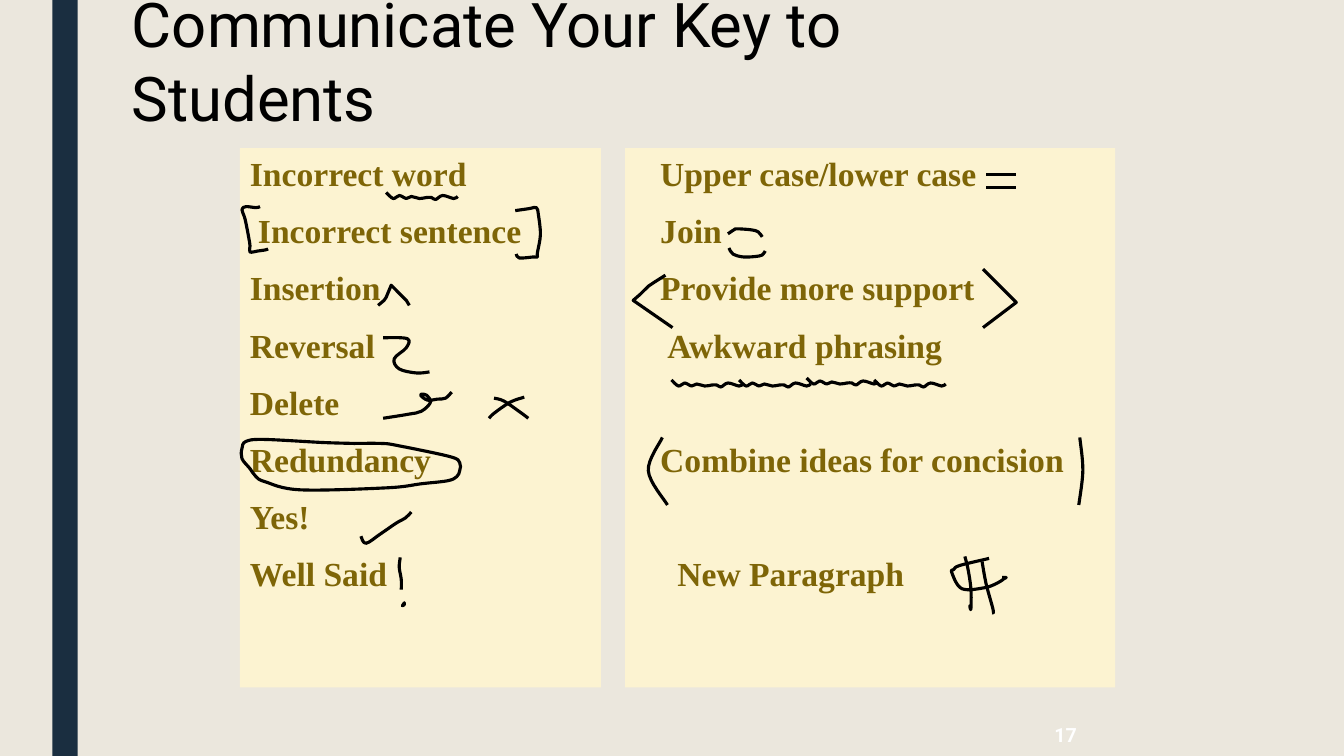
from pptx import Presentation
from pptx import util as u
from pptx.dml.color import RGBColor
from pptx.enum import shapes, text
from pptx.oxml.ns import qn
from lxml import etree

INK, CREAM, GOLD = "000000", "FCF3D1", "7E6507"
SERIF, SANS = "Times New Roman", "Roboto"
TOP, TALL = 1.47, 5.35

# Pen strokes: hundredths of an inch from the stroke's corner
WAVE = [(0, 0), (7, 6), (13, 3), (20, 6), (25, 4), (33, 6),
        (40, 5), (45, 5), (49, 7), (56, 3), (67, 6), (71, 4)]
LOOP = [(111, 4), (79, 3), (22, 0), (4, 2), (0, 9), (0, 19), (8, 29),
        (14, 37), (23, 42), (58, 50), (144, 48), (178, 44), (204, 41),
        (213, 37), (216, 31), (216, 23), (206, 17), (154, 6), (138, 4), (111, 4)]

# Each mark: left and top within its panel, then its points
LEFT = [
    (1.45, 0.44, WAVE),
    (0.02, 0.58, [(18, 0), (14, 1), (4, 0), (0, 3), (3, 12), (7, 32),
                  (8, 39), (8, 45), (16, 44), (23, 43), (26, 42)]),
    (2.73, 0.59, [(0, 3), (14, 1), (21, 0), (23, 7), (25, 27), (22, 45),
                  (22, 49), (18, 49), (4, 50), (1, 46)]),
    (1.42, 1.86, [(0, 2), (24, 3), (23, 12), (11, 23), (16, 33), (33, 37), (46, 36)]),
    (1.42, 2.42, [(0, 26), (25, 22), (38, 19), (47, 10), (43, 3), (40, 2),
                  (37, 3), (44, 8), (54, 7), (62, 6), (68, 0)]),
    (2.52, 2.48, [(0, 0), (10, 3), (26, 14), (34, 20)]),
    (2.47, 2.47, [(35, 0), (21, 5), (5, 16), (0, 21)]),
    (0.02, 2.89, LOOP),
    (1.20, 3.61, [(0, 24), (5, 31), (19, 22), (35, 11), (44, 6), (50, 0)]),
    (1.58, 4.06, [(1, 0), (0, 10), (2, 22), (2, 32)]),
]
RIGHT = [
    (1.02, 0.80, [(0, 5), (6, 1), (9, 0), (23, 1), (30, 3), (34, 8)]),
    (1.03, 0.99, [(0, 0), (4, 6), (15, 9), (30, 8), (34, 6), (36, 3)]),
    (0.22, 2.87, [(15, 0), (1, 33), (20, 67)]),
    (4.50, 2.87, [(1, 0), (4, 33), (0, 67)]),
    (3.37, 4.05, [(0, 0), (3, 12), (6, 32), (6, 52), (5, 49), (7, 49)]),
    (3.54, 4.10, [(0, 0), (4, 22), (11, 48), (10, 51)]),
    (3.24, 4.07, [(37, 0), (8, 7), (2, 11), (0, 14), (10, 30), (33, 29),
                  (46, 24), (52, 20), (54, 19), (50, 19)]),
] + [(0.46 + 0.67 * i, 2.28 if i == 2 else 2.30, WAVE) for i in range(4)]


def color(code):
    return RGBColor.from_string(code)


def write(para, words, size=24, font=SERIF, hue=GOLD, bold=False,
          align=text.PP_ALIGN.LEFT, before=0, indent=0):
    para.alignment = align
    para.space_before = u.Pt(before)
    if indent:
        props = para._p.get_or_add_pPr()
        props.set("marL", str(u.Inches(indent)))
        props.set("indent", "0")
    run = para.add_run()
    run.text = words
    face = run.font
    face.name, face.size, face.bold = font, u.Pt(size), bold
    face.color.rgb = color(hue)


def block(slide, x, y, w, h, hue):
    box = slide.shapes.add_shape(shapes.MSO_SHAPE.RECTANGLE, *map(u.Inches, (x, y, w, h)))
    box.shadow.inherit = False
    box.fill.solid()
    box.fill.fore_color.rgb = color(hue)
    box.line.fill.background()
    return box


def label(slide, x, y, w, h, words, anchor, **style):
    frame = slide.shapes.add_textbox(*map(u.Inches, (x, y, w, h))).text_frame
    frame.word_wrap = True
    frame.vertical_anchor = anchor
    write(frame.paragraphs[0], words, **style)


def bend(mark):
    """Turn the straight segments of a stroke into smooth Bezier curves."""
    geo = mark._element.spPr
    spots = [(int(p.get("x")), int(p.get("y"))) for p in geo.iter(qn("a:pt"))]
    ends = [spots[0], *spots, spots[-1]]
    for seg, a, b, c, d in zip(list(geo.iter(qn("a:lnTo"))),
                               ends, ends[1:], ends[2:], ends[3:]):
        out = [q + (r - p) / 6 for p, q, r in zip(a, b, c)]
        back = [q - (r - p) / 6 for p, q, r in zip(b, c, d)]
        arc = etree.Element(qn("a:cubicBezTo"))
        for px, py in (out, back, c):
            etree.SubElement(arc, qn("a:pt"), x=str(round(px)), y=str(round(py)))
        seg.getparent().replace(seg, arc)


def stroke(slide, x, y, points, fill=None, smooth=True):
    spots = [(1000 * x + 10 * a, 1000 * y + 10 * b) for a, b in points]
    pen = slide.shapes.build_freeform(*spots[0], scale=u.Inches(1) / 1000)
    pen.add_line_segments(spots[1:], close=bool(fill))
    mark = pen.convert_to_shape()
    mark.shadow.inherit = False
    if fill:
        mark.fill.solid()
        mark.fill.fore_color.rgb = color(fill)
    else:
        mark.fill.background()
    mark.line.color.rgb = color(INK)
    mark.line.width = u.Pt(2.25)
    if smooth:
        bend(mark)


def panel(slide, x, y, w, h, rows, marks):
    """Rows hold the words, their indent and the space before them."""
    frame = block(slide, x, y, w, h, CREAM).text_frame
    frame.word_wrap = True
    frame.vertical_anchor = text.MSO_ANCHOR.TOP
    for i, (words, indent, before) in enumerate(rows):
        para = frame.add_paragraph() if i else frame.paragraphs[0]
        write(para, words, bold=True, before=before, indent=indent)
    for dx, dy, points in marks:
        stroke(slide, x + dx, y + dy, points)


def left(slide, x, y, w, h):
    names = ["Incorrect word", "Incorrect sentence", "Insertion", "Reversal",
             "Delete", "Redundancy", "Yes!", "Well Said"]
    rows = [(name, 0.08 if i == 1 else 0, 12 if i else 0)
            for i, name in enumerate(names)]
    panel(slide, x, y, w, h, rows, LEFT)
    # Caret
    stroke(slide, x + 1.37, y + 1.36,
           [(0, 20), (6, 15), (8, 12), (13, 0), (28, 15), (31, 20)], smooth=False)
    # Dot of the exclamation mark
    stroke(slide, x + 1.61, y + 4.51, [(2, 0), (0, 3), (2, 2)],
           fill="69A1AB", smooth=False)


def right(slide, x, y, w, h):
    gap = 52.8  # leaves one row open
    rows = [("Upper case/lower case", 0.25, 0), ("Join", 0.25, 12),
            ("Provide more support", 0.25, 12), ("Awkward phrasing", 0.32, 12),
            ("Combine ideas for concision", 0.25, gap), ("New Paragraph", 0.42, gap)]
    panel(slide, x, y, w, h, rows, RIGHT)
    # Angle brackets
    stroke(slide, x + 0.08, y + 1.26,
           [(32, 0), (21, 7), (15, 11), (7, 19), (0, 25), (39, 52)], smooth=False)
    stroke(slide, x + 3.55, y + 1.2, [(0, 0), (33, 33), (0, 58)], smooth=False)
    # Double underline
    for dy in (0.26, 0.39):
        bar = slide.shapes.add_connector(
            shapes.MSO_CONNECTOR.STRAIGHT,
            *map(u.Inches, (x + 3.58, y + dy, x + 3.88, y + dy)))
        bar.line.color.rgb = color(INK)
        bar.line.width = u.Pt(2.25)
        etree.SubElement(bar._element.spPr, qn("a:effectLst"))


def main():
    deck = Presentation()
    deck.slide_width, deck.slide_height = u.Inches(13.33), u.Inches(7.5)
    slide = deck.slides.add_slide(deck.slide_layouts[6])
    slide.background.fill.solid()
    slide.background.fill.fore_color.rgb = color("EBE7DD")
    # Side band
    block(slide, 0.52, 0, 0.25, 7.5, "1A2E40")
    # Key panels
    left(slide, 2.38, TOP, 3.58, TALL)
    right(slide, 6.2, TOP, 4.86, TALL)
    # Title and slide number
    label(slide, 1.21, 0.13, 8.5, 1.25, "Communicate Your Key to Students",
          text.MSO_ANCHOR.BOTTOM, size=44, font=SANS, hue=INK)
    label(slide, 10.22, 7.09, 0.7, 0.4, "17", text.MSO_ANCHOR.MIDDLE, size=14,
          font=SANS, hue="FFFFFF", bold=True, align=text.PP_ALIGN.CENTER)
    deck.save("out.pptx")


if __name__ == "__main__":
    main()
